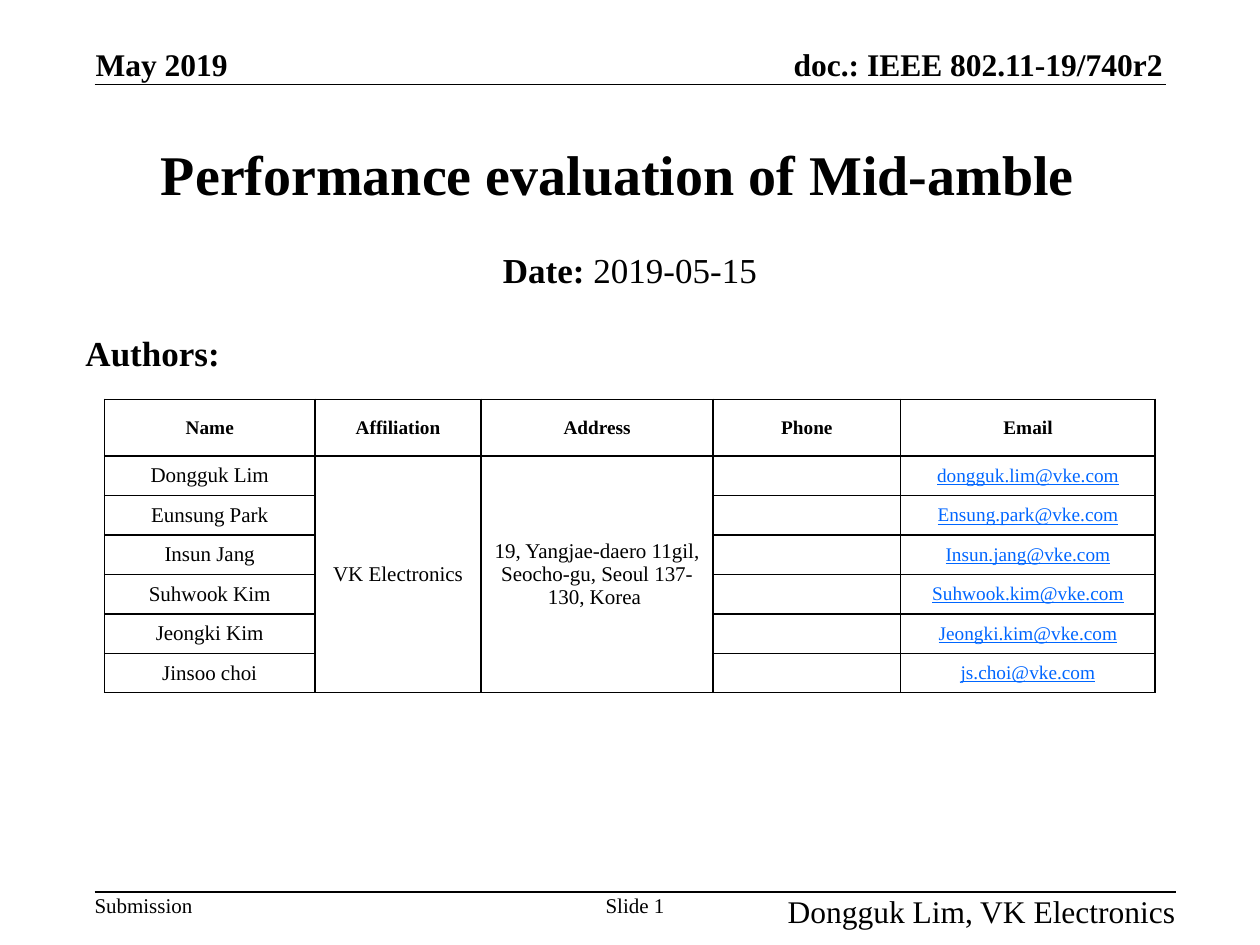
from dataclasses import dataclass

from lxml.etree import SubElement
from pptx import Presentation
from pptx.dml.color import RGBColor
from pptx.enum.text import MSO_ANCHOR as Anchor, MSO_AUTO_SIZE as AutoSize, PP_ALIGN as Align
from pptx.oxml.ns import qn
from pptx.util import Inches, Pt


@dataclass(frozen=True)
class Theme:
    font: str = "Times New Roman"
    ink: RGBColor = RGBColor(0, 0, 0)
    link: RGBColor = RGBColor(0x00, 0x66, 0xFF)
    title: int = 32
    body: int = 20
    header: int = 18
    small: int = 12
    table_head: int = 11
    rule: int = 1


THEME = Theme()
HEADERS = ["Name", "Affiliation", "Address", "Phone", "Email"]
AUTHORS = [
    ("Dongguk Lim", "dongguk.lim@vke.com"),
    ("Eunsung Park", "Ensung.park@vke.com"),
    ("Insun Jang", "Insun.jang@vke.com"),
    ("Suhwook Kim", "Suhwook.kim@vke.com"),
    ("Jeongki Kim", "Jeongki.kim@vke.com"),
    ("Jinsoo choi", "js.choi@vke.com"),
]
COMPANY = "VK Electronics"
ADDRESS = "19, Yangjae-daero 11gil, Seocho-gu, Seoul 137-130, Korea "


def set_attrs(obj, values):
    for name, value in values.items():
        setattr(obj, name, value)


def add_run(p, text, size, color=THEME.ink, **extra):
    r = p.add_run()
    r.text = text
    set_attrs(r.font, {"name": THEME.font, "size": Pt(size), **extra})
    r.font.color.rgb = color


def add_text(s, box, runs, size, align=Align.LEFT, anchor=Anchor.TOP, before=0):
    """Add a wrapped text box; runs are (text, bold) pairs."""
    tf = s.shapes.add_textbox(*map(Inches, box)).text_frame
    set_attrs(tf, {"word_wrap": True, "vertical_anchor": anchor})
    p = tf.paragraphs[0]
    set_attrs(p, {"alignment": align, "space_before": Pt(before)})
    for text, bold in runs:
        add_run(p, text, size, bold=bold)
    return tf


def add_label(s, box, text, size, bold=False, **options):
    """Add an unwrapped margin label without insets."""
    tf = add_text(s, box, [(text, bold)], size, **options)
    set_attrs(tf, {"word_wrap": False, "auto_size": AutoSize.SHAPE_TO_FIT_TEXT,
                   "margin_left": 0, "margin_right": 0, "margin_top": 0, "margin_bottom": 0})


def add_rule(s, left, right, y):
    line = s.shapes.add_connector(1, Inches(left), Inches(y), Inches(right), Inches(y))
    line.line.color.rgb = THEME.ink
    line.line.width = Pt(THEME.rule)
    SubElement(line._element.spPr, qn("a:effectLst"))


def add_header(s, left, top, right):
    bold_bottom = {"bold": True, "anchor": Anchor.BOTTOM}
    add_label(s, (left + 0.01, top, 1.06, 0.3), "May 2019", THEME.header, **bold_bottom)
    add_label(s, (right - 3.48, top, 3.46, 0.3), "doc.: IEEE 802.11-19/740r2",
              THEME.header, align=Align.RIGHT, **bold_bottom)
    add_rule(s, left, right, top + 0.31)


def add_footer(s, left, top, right):
    add_rule(s, left, right, top)
    add_label(s, (left, top, 0.78, 0.2), "Submission", THEME.small)
    add_label(s, (4.75, top, 0.58, 0.2), "Slide 1", THEME.small, align=Align.CENTER)
    add_label(s, (right - 3.2, top, 3.2, 0.3), f"Dongguk Lim, {COMPANY}",
              THEME.header, align=Align.RIGHT)


def style_cell(cell, is_head):
    cell.fill.background()
    cell.vertical_anchor = Anchor.MIDDLE
    if not is_head:
        set_attrs(cell, {"margin_left": Inches(0.07), "margin_right": Inches(0.07),
                         "margin_top": 0, "margin_bottom": 0})
    tcPr = cell._tc.get_or_add_tcPr()
    for i, side in enumerate(("lnL", "lnR", "lnT", "lnB")):
        ln = tcPr.makeelement(qn(f"a:{side}"), {"w": str(Pt(THEME.rule))})
        fill = SubElement(ln, qn("a:solidFill"))
        SubElement(fill, qn("a:srgbClr"), val=str(THEME.ink))
        tcPr.insert(i, ln)


def fill_cell(cell, text, size, **font):
    p = cell.text_frame.paragraphs[0]
    p.alignment = Align.CENTER
    add_run(p, text, size, **font)


def add_author_table(s, box):
    widths = [1.67, 1.32, 1.84, 1.49, 2.02]
    head_height = 0.45
    row_height = (box[3] - head_height) / len(AUTHORS)
    heights = [head_height] + [row_height] * len(AUTHORS)
    frame = s.shapes.add_table(len(heights), len(widths), *map(Inches, box))
    table = frame.table
    set_attrs(table, {"first_row": False, "horz_banding": False})
    for column, width in zip(table.columns, widths):
        column.width = Inches(width)
    for i, (row, height) in enumerate(zip(table.rows, heights)):
        row.height = Inches(height)
        for cell in row.cells:
            style_cell(cell, is_head=i == 0)

    for j, text in enumerate(HEADERS):
        fill_cell(table.cell(0, j), text, THEME.table_head, bold=True)
    for j, text in ((1, COMPANY), (2, ADDRESS)):
        table.cell(1, j).merge(table.cell(len(AUTHORS), j))
        fill_cell(table.cell(1, j), text, THEME.small)
    for i, (name, email) in enumerate(AUTHORS, 1):
        fill_cell(table.cell(i, 0), name, THEME.small)
        fill_cell(table.cell(i, 4), email, THEME.table_head, color=THEME.link, underline=True)


def add_title_slide(prs):
    s = prs.slides.add_slide(prs.slide_layouts[6])
    add_header(s, 0.75, 0.36, 9.25)
    add_footer(s, 0.75, 7.08, 9.33)
    add_text(s, (0.42, 0.75, 9.08, 1.25), [("Performance evaluation of Mid-amble ", True)],
             THEME.title, Align.CENTER, Anchor.MIDDLE)
    add_text(s, (0.75, 1.92, 8.5, 0.42), [("Date:", True), (" 2019-05-15", False)],
             THEME.body, Align.CENTER, before=4)
    add_text(s, (0.58, 2.58, 1.58, 0.42), [("Authors:", True)], THEME.body, before=4)
    add_author_table(s, (0.83, 3.17, 8.33, 2.33))


def main():
    prs = Presentation()
    set_attrs(prs, {"slide_width": Inches(10), "slide_height": Inches(7.5)})
    add_title_slide(prs)
    prs.save("out.pptx")


if __name__ == "__main__":
    main()
